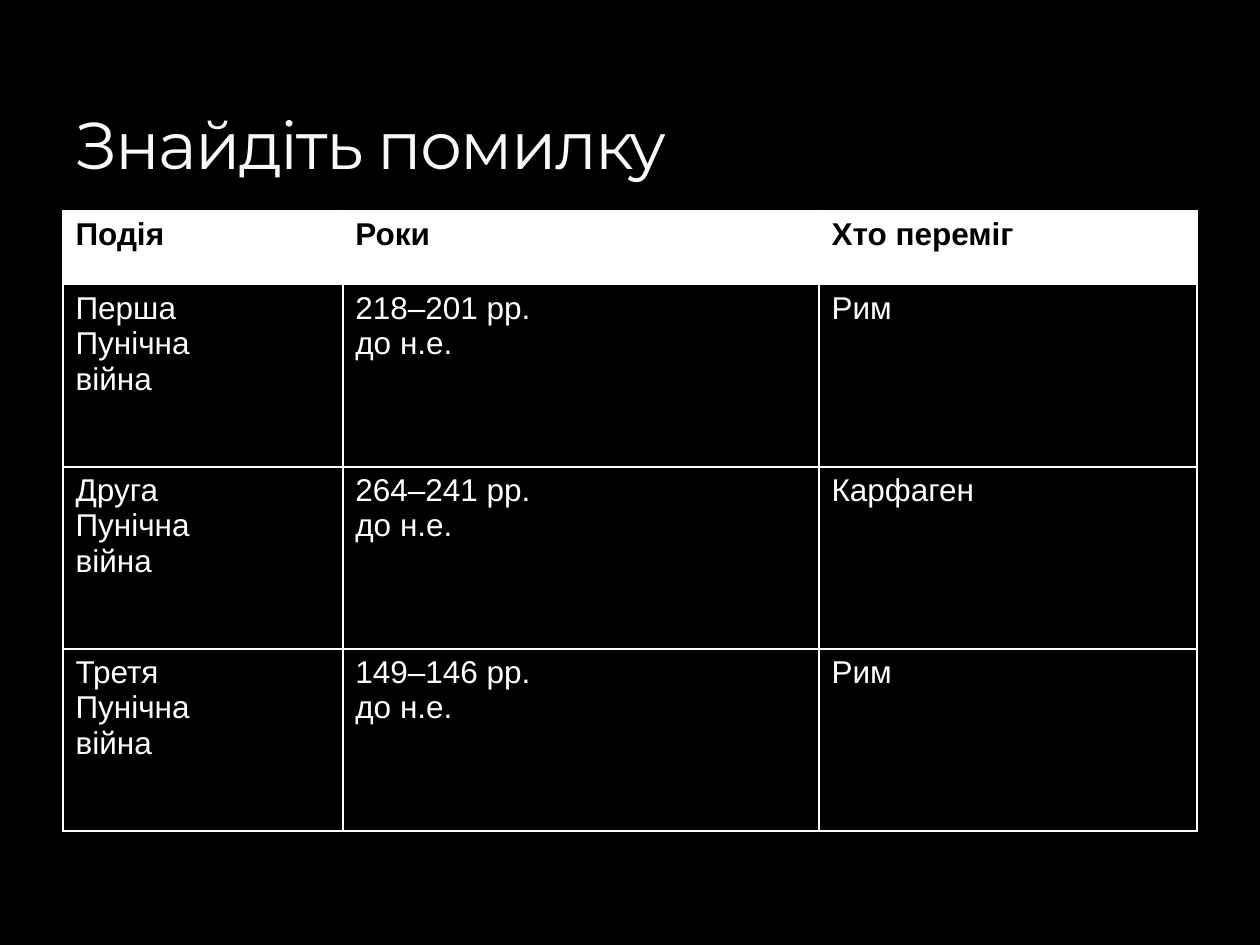
"""Build a slide with a table of the Punic Wars that contains mistakes to find."""
from lxml import etree
from pptx import Presentation, util as u
from pptx.dml.color import RGBColor
from pptx.enum import text
from pptx.oxml.ns import qn

BLACK = RGBColor(0x00, 0x00, 0x00)
WHITE = RGBColor(0xFF, 0xFF, 0xFF)
TITLE_COLOR = RGBColor(0xF9, 0xF9, 0xF9)

LEFT = u.Cm(1.27)
WIDTH = u.Cm(22.86)
COLUMN_WIDTHS = (5.64, 9.6, 7.62)
HEADER_HEIGHT = 1.5
ROW_HEIGHT = 3.67

HEADER = ("Подія", "Роки", "Хто переміг")
WARS = (
    ("Перша", "218–201", "Рим"),
    ("Друга", "264–241", "Карфаген"),
    ("Третя", "149–146", "Рим"),
)


def set_background(slide, color):
    fill = slide.background.fill
    fill.solid()
    fill.fore_color.rgb = color


def add_title(slide, wording):
    box = slide.shapes.add_textbox(LEFT, u.Cm(0.43), WIDTH, u.Cm(3.38))
    frame = box.text_frame
    frame.word_wrap = True
    frame.vertical_anchor = text.MSO_ANCHOR.BOTTOM
    paragraph = frame.paragraphs[0]
    run = paragraph.add_run()
    run.text = wording
    run.font.size = u.Pt(37.8)
    run.font.name = "Montserrat"
    run.font.color.rgb = TITLE_COLOR
    run.font._element.set("spc", "-100")


def add_borders(cell, sides):
    properties = cell._tc.get_or_add_tcPr()
    for side in sides:
        line = etree.SubElement(properties, qn(f"a:ln{side}"), w=str(u.Pt(1)))
        fill = etree.SubElement(line, qn("a:solidFill"))
        etree.SubElement(fill, qn("a:srgbClr"), val=str(WHITE))


def fill_cell(cell, wording, color, background, bold):
    cell.fill.solid()
    cell.fill.fore_color.rgb = background
    cell.text = wording
    for paragraph in cell.text_frame.paragraphs:
        paragraph.font.name = "Arial"
        paragraph.font.size = u.Pt(18)
        paragraph.font.bold = bold
        paragraph.font.color.rgb = color


def add_war_table(slide):
    rows = [HEADER] + [
        (f"{order}\nПунічна\nвійна", f"{years} рр.\nдо н.е.", winner)
        for order, years, winner in WARS
    ]
    heights = [HEADER_HEIGHT] + [ROW_HEIGHT] * len(WARS)
    table = slide.shapes.add_table(
        len(rows), len(HEADER), LEFT, u.Cm(4.24), WIDTH, u.Cm(sum(heights))
    ).table
    table.horz_banding = False
    for column, width in zip(table.columns, COLUMN_WIDTHS):
        column.width = u.Cm(width)
    side_borders = ("LTB", "TB", "RTB")
    for index, (wordings, height) in enumerate(zip(rows, heights)):
        table.rows[index].height = u.Cm(height)
        is_header = index == 0
        color, background = (BLACK, WHITE) if is_header else (WHITE, BLACK)
        for cell, wording, sides in zip(table.rows[index].cells, wordings, side_borders):
            add_borders(cell, sides)
            fill_cell(cell, wording, color, background, is_header)


def main():
    presentation = Presentation()
    presentation.slide_width = u.Cm(25.4)
    presentation.slide_height = u.Cm(19.05)
    slide = presentation.slides.add_slide(presentation.slide_layouts[6])
    set_background(slide, BLACK)
    add_war_table(slide)
    add_title(slide, "Знайдіть помилку")
    presentation.save("out.pptx")


if __name__ == "__main__":
    main()
